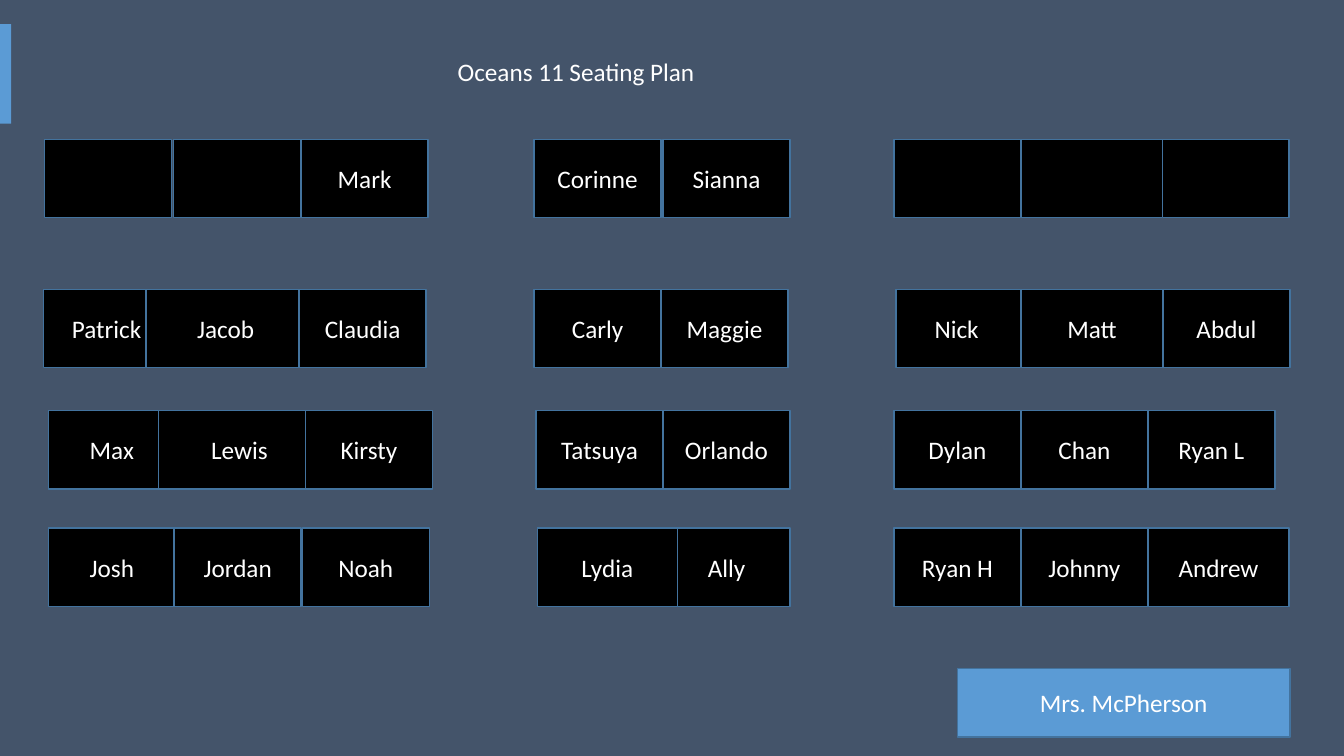
from dataclasses import dataclass

from pptx import Presentation
from pptx import util as u
from pptx.dml.color import RGBColor
from pptx.enum import shapes, text

FONT = "Calibri"
WHITE, BLACK = "FFFFFF", "000000"
BACKGROUND, ACCENT, OUTLINE = "44546A", "5B9BD5", "43739E"
DESK_WIDTH, DESK_HEIGHT = 3.2, 1.98


@dataclass
class Seat:
    left: float
    name: str = ""
    width: float = DESK_WIDTH


@dataclass
class Row:
    top: float
    seats: list[Seat]


# Rows from front to back; later seats lie over earlier ones (lengths in cm)
ROWS = [
    Row(3.51, [
        Seat(1.12), Seat(4.37), Seat(7.59, "Mark"),
        Seat(13.46, "Corinne"), Seat(16.71, "Sianna"),
        Seat(22.53), Seat(25.73, width=3.58), Seat(29.29),
    ]),
    Row(7.29, [
        Seat(1.09, "Patrick"), Seat(3.68, "Jacob", 4.01), Seat(7.54, "Claudia"),
        Seat(13.46, "Carly"), Seat(16.66, "Maggie"),
        Seat(22.58, "Nick "), Seat(25.73, "Matt", 3.58), Seat(29.31, "Abdul"),
    ]),
    Row(10.34, [
        Seat(1.22, "Max"), Seat(3.99, "Lewis", 4.09), Seat(7.7, "Kirsty"),
        Seat(13.51, "Tatsuya"), Seat(16.71, "Orlando"),
        Seat(22.53, "Dylan"), Seat(25.73, "Chan"), Seat(28.93, "Ryan L"),
    ]),
    Row(13.31, [
        Seat(1.22, "Josh"), Seat(4.39, "Jordan"), Seat(7.62, "Noah"),
        Seat(16.71, "Ally"), Seat(13.54, "Lydia", 3.53),
        Seat(22.53, "Ryan H"), Seat(25.73, "Johnny"), Seat(28.93, "Andrew", 3.56),
    ]),
]


def color(value: str) -> RGBColor:
    return RGBColor.from_string(value)


def write(frame, words: str, alignment) -> None:
    paragraph = frame.paragraphs[0]
    paragraph.alignment = alignment
    run = paragraph.add_run()
    run.text = words
    run.font.name = FONT
    run.font.size = u.Pt(18)
    run.font.color.rgb = color(WHITE)


def add_box(slide, left: float, top: float, width: float, height: float,
            fill: str, line: str = "", words: str = "") -> None:
    shape = slide.shapes.add_shape(
        shapes.MSO_SHAPE.RECTANGLE, u.Cm(left), u.Cm(top), u.Cm(width), u.Cm(height))
    shape.shadow.inherit = False
    shape.fill.solid()
    shape.fill.fore_color.rgb = color(fill)
    if line:
        shape.line.color.rgb = color(line)
        shape.line.width = u.Pt(1)
    else:
        shape.line.fill.background()
    if words:
        shape.text_frame.vertical_anchor = text.MSO_ANCHOR.MIDDLE
        write(shape.text_frame, words, text.PP_ALIGN.CENTER)


def add_title(slide, words: str) -> None:
    title = slide.shapes.title
    title.left, title.top = u.Cm(11.28), u.Cm(1.3)
    title.width, title.height = u.Cm(6.55), u.Cm(1.02)
    frame = title.text_frame
    frame.word_wrap = False
    frame.auto_size = text.MSO_AUTO_SIZE.SHAPE_TO_FIT_TEXT
    frame.vertical_anchor = text.MSO_ANCHOR.TOP
    write(frame, words, text.PP_ALIGN.LEFT)


def main() -> None:
    presentation = Presentation()
    presentation.slide_width, presentation.slide_height = u.Cm(33.87), u.Cm(19.05)
    slide = presentation.slides.add_slide(presentation.slide_layouts[5])
    slide.background.fill.solid()
    slide.background.fill.fore_color.rgb = color(BACKGROUND)

    # Title and accent bar
    add_title(slide, "Oceans 11 Seating Plan")
    add_box(slide, 0, 0.61, 0.28, 2.51, ACCENT)

    # Desks
    for row in ROWS:
        for seat in row.seats:
            add_box(slide, seat.left, row.top, seat.width, DESK_HEIGHT,
                    BLACK, OUTLINE, seat.name)

    # Teacher's desk
    add_box(slide, 24.13, 16.84, 8.38, 1.73, ACCENT, OUTLINE, "Mrs. McPherson")

    presentation.save("out.pptx")


if __name__ == "__main__":
    main()
